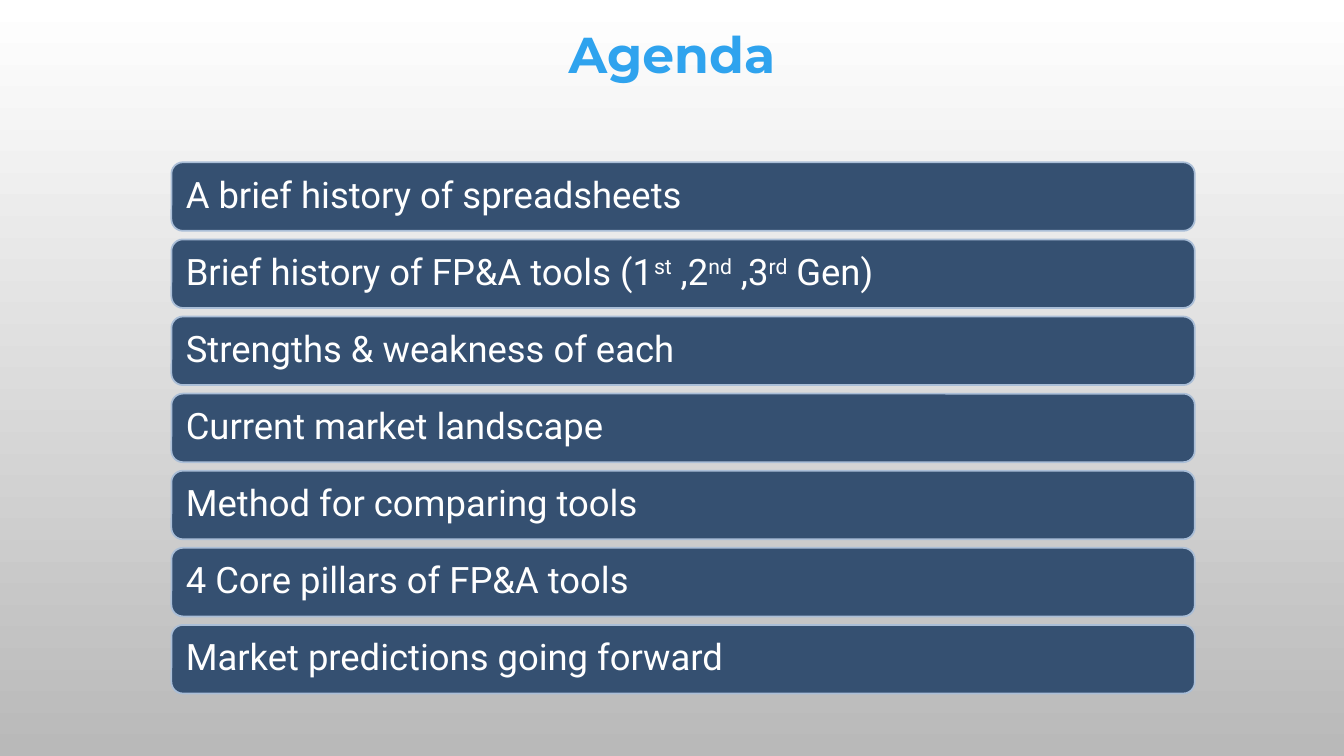
from pptx import Presentation
from pptx.dml.color import RGBColor
from pptx.enum.shapes import MSO_SHAPE
from pptx.enum.text import MSO_ANCHOR, PP_ALIGN
from pptx.util import Inches, Pt

WHITE = RGBColor(0xFF, 0xFF, 0xFF)
GREY = RGBColor(0xB9, 0xB9, 0xB9)
NAVY = RGBColor(0x35, 0x50, 0x71)
PALE = RGBColor(0xAA, 0xBE, 0xD7)
BLUE = RGBColor(0x2F, 0xA3, 0xEE)


def write(shape, *parts, font, size, color, bold=False, inset=0.1,
          align=PP_ALIGN.LEFT, anchor=MSO_ANCHOR.TOP):
    frame = shape.text_frame
    frame.word_wrap = True
    frame.vertical_anchor = anchor
    frame.margin_left = frame.margin_right = Inches(inset)
    frame.margin_top = frame.margin_bottom = Inches(inset)
    para = frame.paragraphs[0]
    para.alignment = align
    para.line_spacing = 0.9
    for index, part in enumerate(parts):
        run = para.add_run()
        run.text = part
        run.font.name = font
        run.font.size = Pt(size)
        run.font.bold = bold
        run.font.color.rgb = color
        if index % 2:
            run.font._element.set("baseline", "30000")


deck = Presentation()
deck.slide_width = Inches(13.33)
deck.slide_height = Inches(7.5)
slide = deck.slides.add_slide(deck.slide_layouts[6])

back = slide.background.fill
back.gradient()
back.gradient_angle = 270
for stop, color in zip(back.gradient_stops, (WHITE, GREY)):
    stop.color.rgb = color

title = slide.shapes.add_textbox(Inches(1), Inches(0.2), Inches(11.33), Inches(0.97))
write(title, "Agenda", font="Montserrat", size=36, color=BLUE, bold=True,
      align=PP_ALIGN.CENTER)

topics = [
    ["A brief history of spreadsheets"],
    ["Brief history of FP&A tools (1", "st", " ,2", "nd", " ,3", "rd", " Gen)"],
    ["Strengths & weakness of each"],
    ["Current market landscape"],
    ["Method for comparing tools"],
    ["4 Core pillars of FP&A tools"],
    ["Market predictions going forward"],
]
first, last = 1.61, 6.2
pitch = (last - first) / (len(topics) - 1)

for row, topic in enumerate(topics):
    bar = slide.shapes.add_shape(MSO_SHAPE.ROUNDED_RECTANGLE, Inches(1.7),
                                 Inches(first + row * pitch), Inches(10.15), Inches(0.68))
    bar.shadow.inherit = False
    bar.fill.solid()
    bar.fill.fore_color.rgb = NAVY
    bar.line.color.rgb = PALE
    bar.line.width = Pt(1.25)
    write(bar, *topic, font="Roboto", size=26, color=WHITE, inset=0.11,
          anchor=MSO_ANCHOR.MIDDLE)

deck.save("out.pptx")
